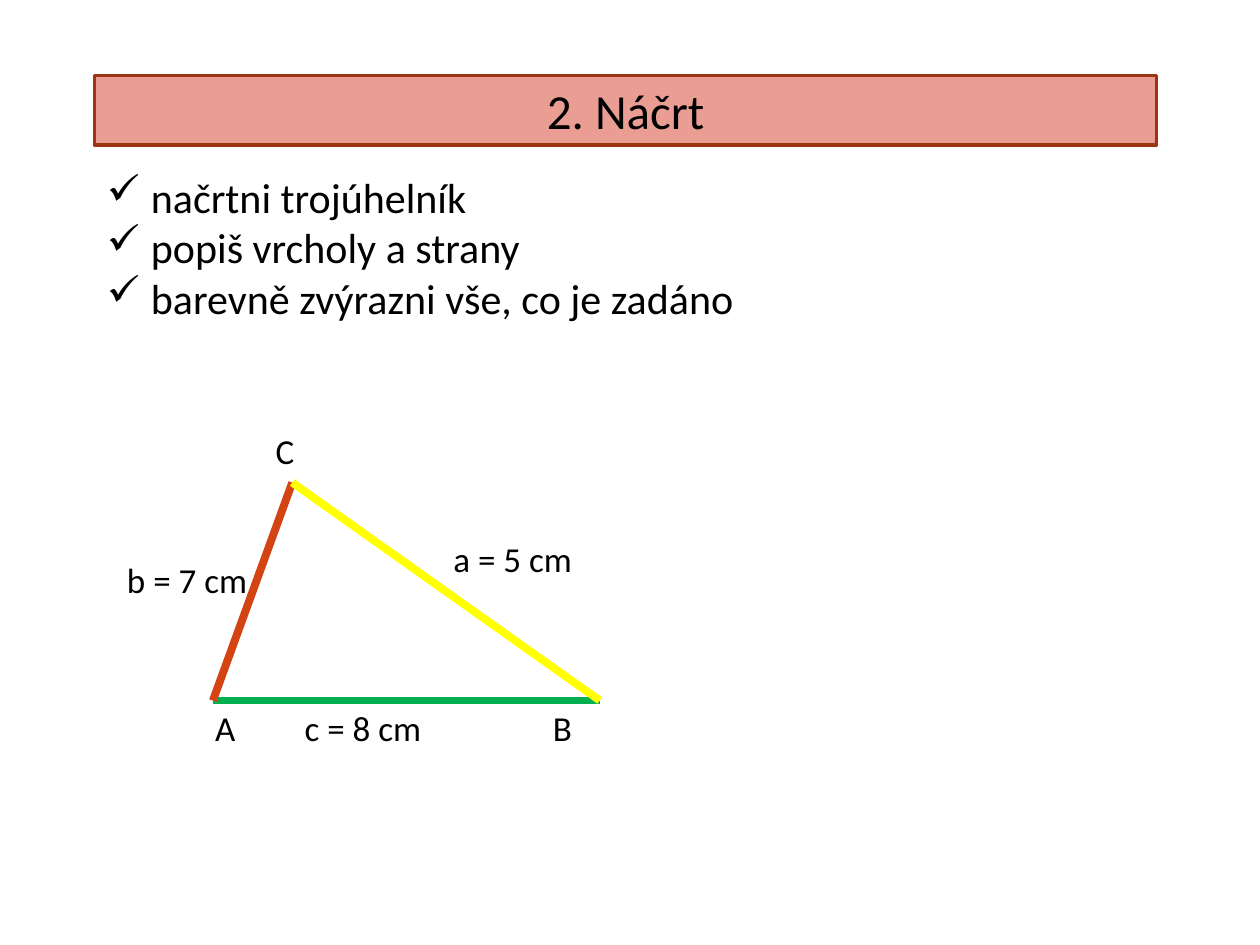
import pptx
import pptx.util
import pptx.dml.color
import pptx.enum.shapes
import pptx.enum.text
import pptx.oxml.ns
import lxml.etree

Inches = pptx.util.Inches
Pt = pptx.util.Pt

COLORS = {
    "ink": "000000",
    "band": "E99D93",
    "edge": "9C3511",
    "a": "FFFF00",
    "b": "D34412",
    "c": "00B050",
}


def tint(name):
    return pptx.dml.color.RGBColor.from_string(COLORS[name])


def add_run(para, text, size):
    run = para.add_run()
    run.text = text
    run.font.name = "Calibri"
    run.font.size = Pt(size)
    run.font.color.rgb = tint("ink")


def add_text(slide, box):
    frame = slide.shapes.add_textbox(*map(Inches, box)).text_frame
    frame.word_wrap = True
    return frame


def add_check(para, indent):
    props = para._p.get_or_add_pPr()
    props.set("marL", str(Inches(indent)))
    props.set("indent", str(-Inches(indent)))
    mark = lxml.etree.SubElement(props, pptx.oxml.ns.qn("a:buChar"))
    mark.set("char", "✓")


def add_title(slide, box, text):
    band = slide.shapes.add_shape(
        pptx.enum.shapes.MSO_SHAPE.RECTANGLE, *map(Inches, box))
    band.shadow.inherit = False
    band.fill.solid()
    band.fill.fore_color.rgb = tint("band")
    band.line.color.rgb = tint("edge")
    band.line.width = Pt(2)
    frame = band.text_frame
    frame.vertical_anchor = pptx.enum.text.MSO_ANCHOR.MIDDLE
    para = frame.paragraphs[0]
    para.alignment = pptx.enum.text.PP_ALIGN.CENTER
    add_run(para, text, 28)


def add_steps(slide, box, steps):
    frame = add_text(slide, box)
    for i, step in enumerate(steps):
        para = frame.add_paragraph() if i else frame.paragraphs[0]
        add_check(para, 0.35)
        add_run(para, step, 24)


def add_side(slide, start, end, color):
    line = slide.shapes.add_connector(
        pptx.enum.shapes.MSO_CONNECTOR.STRAIGHT, *map(Inches, start + end))
    line.line.color.rgb = tint(color)
    line.line.width = Pt(4.5)
    lxml.etree.SubElement(line._element.spPr, pptx.oxml.ns.qn("a:effectLst"))


def add_sketch(slide, box):
    left, top, width, height = box
    base = top + height
    A, B, C = (left, base), (left + width, base), (left + 0.63, top)
    for start, end, color in ((A, B, "c"), (A, C, "b"), (C, B, "a")):
        add_side(slide, start, end, color)

    labels = (
        ("a = 5 cm", 1.81, 0.39, 2.2),
        ("c = 8 cm", 0.63, height, 2.44),
        ("b = 7 cm", -0.78, 0.55, 1.5),
        ("C", 0.4, -0.47, 0.47),
        ("B", 2.6, height, 0.47),
        ("A", -0.08, height, 0.31),
    )
    for text, x, y, wide in labels:
        frame = add_text(slide, (left + x, top + y, wide, 0.44))
        add_run(frame.paragraphs[0], text, 20)


def main():
    deck = pptx.Presentation()
    deck.slide_width, deck.slide_height = Inches(10), Inches(7.5)
    slide = deck.slides.add_slide(deck.slide_layouts[6])
    add_title(slide, (0.75, 0.6, 8.43, 0.55), "2. Náčrt")
    add_steps(slide, (0.75, 1.31, 8.43, 1.31), (
        "načrtni trojúhelník",
        "popiš vrcholy a strany",
        "barevně zvýrazni vše, co je zadáno",
    ))
    add_sketch(slide, (1.69, 3.83, 3.07, 1.73))
    deck.save("out.pptx")


if __name__ == "__main__":
    main()
